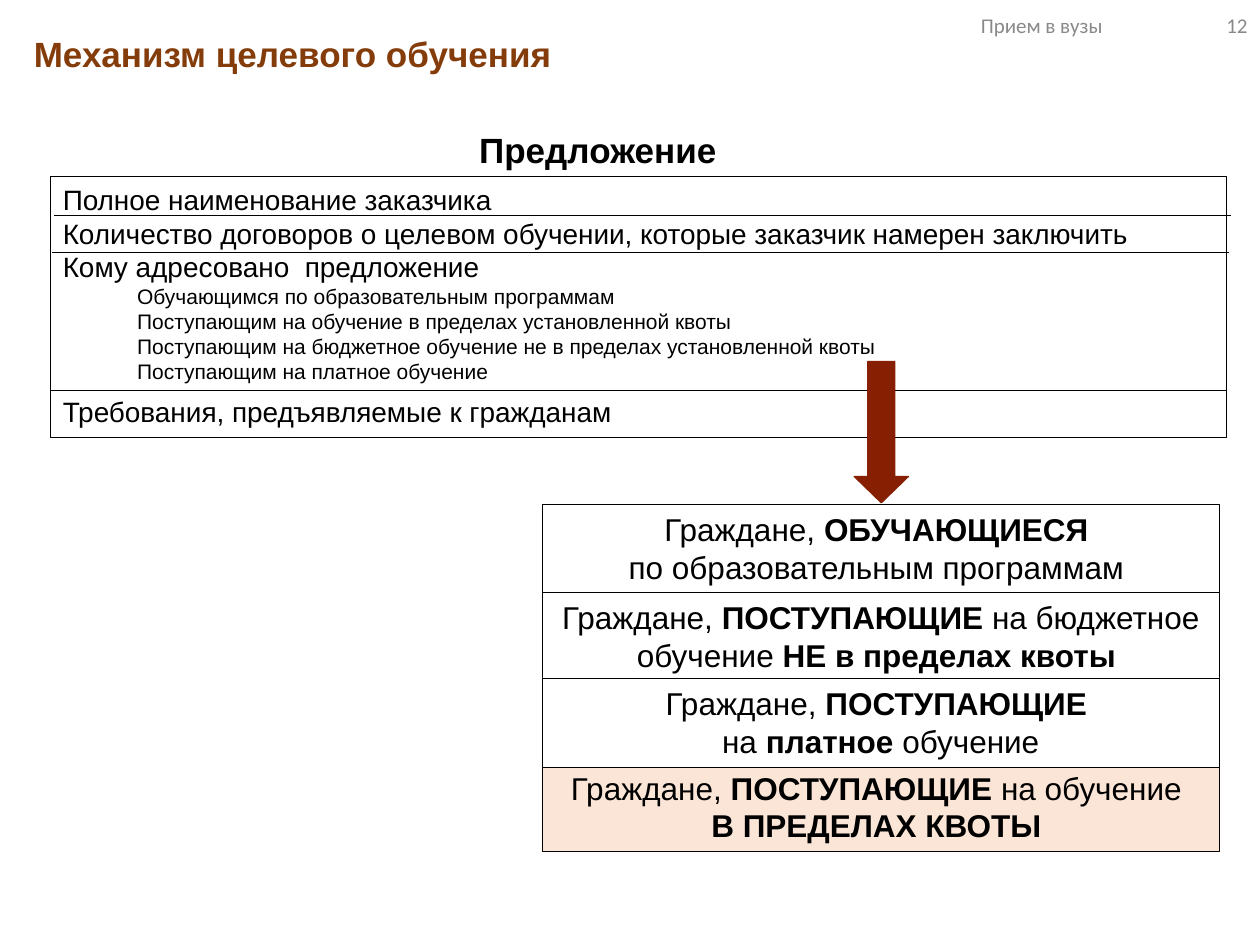
from dataclasses import dataclass

from lxml.etree import SubElement
from pptx import Presentation
from pptx.dml.color import RGBColor
from pptx.enum.shapes import MSO_CONNECTOR, MSO_SHAPE
from pptx.enum.text import MSO_ANCHOR, PP_ALIGN
from pptx.oxml.ns import qn
from pptx.util import Inches, Pt


@dataclass(frozen=True)
class Theme:
    """Fonts, colours and type sizes of the slide."""
    body_font: str = "Arial"
    header_font: str = "Calibri"
    black: str = "000000"
    white: str = "FFFFFF"
    title: str = "843C0B"
    header: str = "898989"
    arrow: str = "871F03"
    highlight: str = "FBE5D6"
    title_size: int = 20
    group_size: int = 18
    field_size: int = 16
    small_size: int = 12


THEME = Theme()

OFFER_FIELDS = [
    ("Полное наименование заказчика", []),
    ("Количество договоров о целевом обучении, которые заказчик намерен заключить", []),
    ("Кому адресовано  предложение", [
        "Обучающимся по образовательным программам",
        "Поступающим на обучение в пределах установленной квоты",
        "Поступающим на бюджетное обучение не в пределах установленной квоты",
        "Поступающим на платное обучение",
    ]),
    ("Требования, предъявляемые к гражданам", []),
]

DIVIDERS = [(0.43, 1.71), (0.41, 2), (0.4, 3.1)]

CITIZEN_GROUPS = [
    (4, THEME.white, [
        [("Граждане, ", False), ("ОБУЧАЮЩИЕСЯ ", True)],
        [("по образовательным программам ", False)],
    ]),
    (4.7, THEME.white, [
        [("Граждане, ", False), ("ПОСТУПАЮЩИЕ", True),
         (" на бюджетное обучение ", False), ("НЕ в пределах квоты ", True)],
    ]),
    (6.05, THEME.highlight, [
        [("Граждане, ", False), ("ПОСТУПАЮЩИЕ ", True), ("на обучение ", False)],
        [("В ПРЕДЕЛАХ КВОТЫ ", True)],
    ]),
    (5.38, THEME.white, [
        [("Граждане, ", False), ("ПОСТУПАЮЩИЕ ", True)],
        [("на ", False), ("платное", True), (" обучение", False)],
    ]),
]


def color(value):
    """Turn a hex string into a colour."""
    return RGBColor.from_string(value)


def write(box, spans, size, font=THEME.body_font, ink=THEME.black,
          align=PP_ALIGN.LEFT, indent=0, before=0):
    """Append a paragraph of (text, bold) spans to a box."""
    frame = box.text_frame
    para = frame.paragraphs[0] if not frame.text else frame.add_paragraph()
    para.alignment = align
    para.space_before = Pt(before)
    if indent:
        para._p.get_or_add_pPr().set("marL", str(Inches(indent)))
    for text, bold in spans:
        span = para.add_run()
        span.text = text
        span.font.name = font
        span.font.size = Pt(size)
        span.font.bold = bold
        span.font.color.rgb = color(ink)


def add_panel(page, kind, left, top, width, height, fill, line=None, weight=0.25):
    """Add a filled shape with an optional outline."""
    panel = page.shapes.add_shape(
        kind, Inches(left), Inches(top), Inches(width), Inches(height))
    panel.shadow.inherit = False
    panel.fill.solid()
    panel.fill.fore_color.rgb = color(fill)
    if line:
        panel.line.color.rgb = color(line)
        panel.line.width = Pt(weight)
    else:
        panel.line.fill.background()
    panel.text_frame.word_wrap = True
    panel.text_frame.vertical_anchor = MSO_ANCHOR.TOP
    return panel


def add_label(page, left, top, width, height, anchor=MSO_ANCHOR.TOP):
    """Add an empty wrapping text box."""
    label = page.shapes.add_textbox(
        Inches(left), Inches(top), Inches(width), Inches(height))
    label.text_frame.word_wrap = True
    label.text_frame.vertical_anchor = anchor
    return label


def add_divider(page, left, top, width):
    """Add a thin horizontal line."""
    divider = page.shapes.add_connector(
        MSO_CONNECTOR.STRAIGHT, Inches(left), Inches(top),
        Inches(left + width), Inches(top))
    divider.line.color.rgb = color(THEME.black)
    divider.line.width = Pt(0.5)
    SubElement(divider._element.spPr, qn("a:effectLst"))


def add_offer(page):
    """Add the offer heading, its fields and their dividers."""
    heading = add_panel(page, MSO_SHAPE.RECTANGLE, 3.21, 0.97, 3.07, 0.44, THEME.white)
    write(heading, [("Предложение", True)], THEME.title_size, align=PP_ALIGN.CENTER)
    offer = add_panel(page, MSO_SHAPE.RECTANGLE, 0.4, 1.4, 9.33, 2.07,
                      THEME.white, THEME.black)
    gap = 0
    for field, items in OFFER_FIELDS:
        write(offer, [(field, False)], THEME.field_size, before=gap)
        for item in items:
            write(offer, [(item, False)], THEME.small_size, indent=0.59)
        gap = 6 if items else 0
    for left, top in DIVIDERS:
        add_divider(page, left, top, 9.34)


def add_groups(page):
    """Add the arrow and the groups of citizens it leads to."""
    arrow = add_panel(page, MSO_SHAPE.DOWN_ARROW, 6.78, 2.87, 0.43, 1.12,
                      THEME.arrow, THEME.arrow, 0.75)
    arrow.adjustments[0] = 0.5
    arrow.adjustments[1] = 0.485
    for top, fill, lines in CITIZEN_GROUPS:
        group = add_panel(page, MSO_SHAPE.RECTANGLE, 4.3, top, 5.38, 0.71,
                          fill, THEME.black)
        for spans in lines:
            write(group, spans, THEME.group_size, align=PP_ALIGN.CENTER)


def add_header(page):
    """Add the section name, the page number and the slide title."""
    for text, left, width in [("Прием в вузы", 7.05, 1.8), ("12", 9.2, 0.8)]:
        label = add_label(page, left, 0, width, 0.4, MSO_ANCHOR.MIDDLE)
        write(label, [(text, False)], THEME.small_size, font=THEME.header_font,
              ink=THEME.header, align=PP_ALIGN.RIGHT)
    title = add_label(page, 0.17, 0.21, 9.8, 0.47)
    write(title, [("Механизм целевого обучения", True)], THEME.title_size,
          ink=THEME.title)


def main():
    """Build and save the slide."""
    deck = Presentation()
    deck.slide_width, deck.slide_height = Inches(10), Inches(7.5)
    page = deck.slides.add_slide(deck.slide_layouts[6])
    add_offer(page)
    add_groups(page)
    add_header(page)
    deck.save("out.pptx")


if __name__ == "__main__":
    main()
